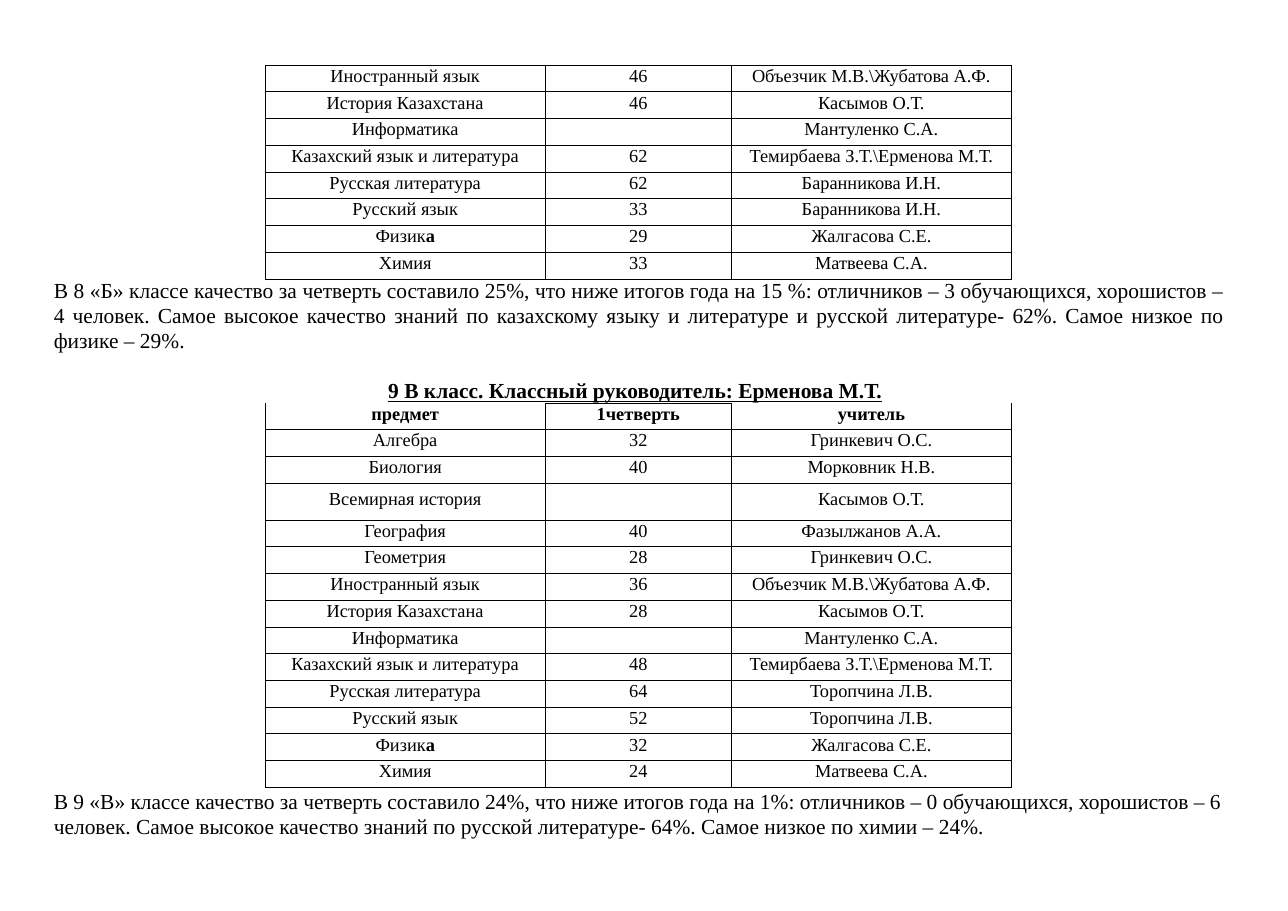
from lxml import etree
from pptx import Presentation
from pptx.dml.color import RGBColor
from pptx.enum.text import MSO_ANCHOR, MSO_AUTO_SIZE, PP_ALIGN
from pptx.oxml.ns import qn
from pptx.util import Cm, Pt

CENTER, JUSTIFY, LEFT = PP_ALIGN.CENTER, PP_ALIGN.JUSTIFY, PP_ALIGN.LEFT
TOP, NO_AUTOFIT = MSO_ANCHOR.TOP, MSO_AUTO_SIZE.NONE
FONT = "Times New Roman"
BLACK = "000000"
BOLD_MARK = "**"

CLASS_8_ROWS = [
    ("Иностранный язык", "46", r"Объезчик М.В.\Жубатова А.Ф."),
    ("История Казахстана", "46", "Касымов О.Т."),
    ("Информатика", "", "Мантуленко С.А."),
    ("Казахский язык и литература", "62", r"Темирбаева З.Т.\Ерменова М.Т."),
    ("Русская литература", "62", "Баранникова И.Н."),
    ("Русский язык", "33", "Баранникова И.Н."),
    ("Физик**а", "29", "Жалгасова С.Е."),
    ("Химия", "33", "Матвеева С.А."),
]
CLASS_9_ROWS = [
    ("предмет", "1четверть", "учитель"),
    ("Алгебра", "32", "Гринкевич О.С."),
    ("Биология", "40", "Морковник Н.В."),
    ("Всемирная история", "", "Касымов О.Т."),
    ("География", "40", "Фазылжанов А.А."),
    ("Геометрия", "28", "Гринкевич О.С."),
    ("Иностранный язык", "36", r"Объезчик М.В.\Жубатова А.Ф."),
    ("История Казахстана", "28", "Касымов О.Т."),
    ("Информатика", "", "Мантуленко С.А."),
    ("Казахский язык и литература", "48", r"Темирбаева З.Т.\Ерменова М.Т."),
    ("Русская литература", "64", "Торопчина Л.В."),
    ("Русский язык", "52", "Торопчина Л.В."),
    ("Физик**а", "32", "Жалгасова С.Е."),
    ("Химия", "24", "Матвеева С.А."),
]
TITLE = "9 В класс. Классный руководитель: Ерменова М.Т."
CLASS_8_SUMMARY = (
    "В 8 «Б» классе качество за четверть составило 25%, что ниже итогов года на 15 %: "
    "отличников – 3 обучающихся, хорошистов – 4 человек. Самое высокое качество знаний "
    "по казахскому языку и литературе и русской литературе- 62%. "
    "Самое низкое по физике – 29%."
)
CLASS_9_SUMMARY = (
    "В 9 «В» классе качество за четверть составило 24%, что ниже итогов года на 1%: "
    "отличников – 0 обучающихся, хорошистов – 6 человек. Самое высокое качество знаний "
    "по русской литературе- 64%. Самое низкое по химии – 24%."
)

TABLE_LEFT = 6.12
COLUMN_WIDTHS = (6.45, 4.3, 6.45)
TALL_ROW = 0.85
TEXT_LEFT, TEXT_WIDTH = 1.24, 27


def color(value):
    return RGBColor.from_string(value)


def write_text(paragraph, text, size=12, bold=False, underline=False,
               align=CENTER, before=0, line_spacing=1.0):
    paragraph.alignment = align
    paragraph.space_before = Pt(before)
    paragraph.line_spacing = line_spacing
    plain, _, emphasized = text.partition(BOLD_MARK)
    for part, part_bold in ((plain, bold), (emphasized, True)):
        if part:
            run = paragraph.add_run()
            run.text = part
            run.font.name = FONT
            run.font.size = Pt(size)
            run.font.bold = part_bold
            run.font.underline = underline
            run.font.color.rgb = color(BLACK)
    etree.SubElement(paragraph._p, qn("a:endParaRPr"), sz=str(size * 100))


def set_borders(cell, hidden=()):
    properties = cell._tc.get_or_add_tcPr()
    for side in ("lnL", "lnR", "lnT", "lnB"):
        line = etree.SubElement(properties, qn(f"a:{side}"), w=str(Pt(0.5)))
        if side in hidden:
            etree.SubElement(line, qn("a:noFill"))
        else:
            fill = etree.SubElement(line, qn("a:solidFill"))
            etree.SubElement(fill, qn("a:srgbClr"), val=BLACK)


def add_grades(slide, rows, top, height, header=False, tall=None):
    width = Cm(sum(COLUMN_WIDTHS))
    table = slide.shapes.add_table(len(rows), len(COLUMN_WIDTHS), Cm(TABLE_LEFT),
                                   Cm(top), width, Cm(height)).table
    table.first_row = table.horz_banding = False
    for column, column_width in zip(table.columns, COLUMN_WIDTHS):
        column.width = Cm(column_width)
    if tall is None:
        row_height = height / len(rows)
    else:
        row_height = (height - TALL_ROW) / (len(rows) - 1)
    for row_index, values in enumerate(rows):
        is_tall = row_index == tall
        is_header = header and row_index == 0
        table.rows[row_index].height = Cm(TALL_ROW if is_tall else row_height)
        for column_index, value in enumerate(values):
            cell = table.cell(row_index, column_index)
            cell.margin_left = cell.margin_right = cell.margin_bottom = 0
            cell.margin_top = Cm(0.13 if is_tall else 0.02)
            open_top = is_header and column_index != 1
            set_borders(cell, hidden=("lnT",) if open_top else ())
            cell.fill.background()
            write_text(cell.text_frame.paragraphs[0], value, bold=is_header,
                       before=3.8 if is_tall else 0.7)


def fill_placeholder(shape, text, left, top, width, height, inset=0, **text_format):
    shape.left, shape.top, shape.width, shape.height = map(Cm, (left, top, width, height))
    frame = shape.text_frame
    frame.word_wrap = True
    frame.auto_size = NO_AUTOFIT
    frame.vertical_anchor = TOP
    frame.margin_left = frame.margin_right = frame.margin_bottom = 0
    frame.margin_top = Cm(inset)
    paragraph = frame.paragraphs[0]
    write_text(paragraph, text, **text_format)
    properties = paragraph._p.get_or_add_pPr()
    properties.set("marL", "0")
    properties.set("indent", "0")
    etree.SubElement(properties, qn("a:buNone"))


def main():
    presentation = Presentation()
    presentation.slide_width, presentation.slide_height = Cm(29.7), Cm(21)
    slide = presentation.slides.add_slide(presentation.slide_layouts[3])
    title, class_8_body, class_9_body = slide.placeholders

    add_grades(slide, CLASS_8_ROWS, top=1.5, height=4.93)
    fill_placeholder(class_8_body, CLASS_8_SUMMARY, TEXT_LEFT, 6.38, TEXT_WIDTH, 1.9,
                     inset=0.05, size=14, align=JUSTIFY, before=1.6, line_spacing=0.96)
    fill_placeholder(title, TITLE, TEXT_LEFT - 0.09, 8.7, TEXT_WIDTH, 0.6,
                     size=14, bold=True, underline=True)
    add_grades(slide, CLASS_9_ROWS, top=9.29, height=8.86, header=True, tall=3)
    fill_placeholder(class_9_body, CLASS_9_SUMMARY, TEXT_LEFT, 18.11, TEXT_WIDTH, 1.25,
                     inset=0.08, size=14, align=LEFT, before=2, line_spacing=Pt(16.1))

    presentation.save("out.pptx")


if __name__ == "__main__":
    main()
